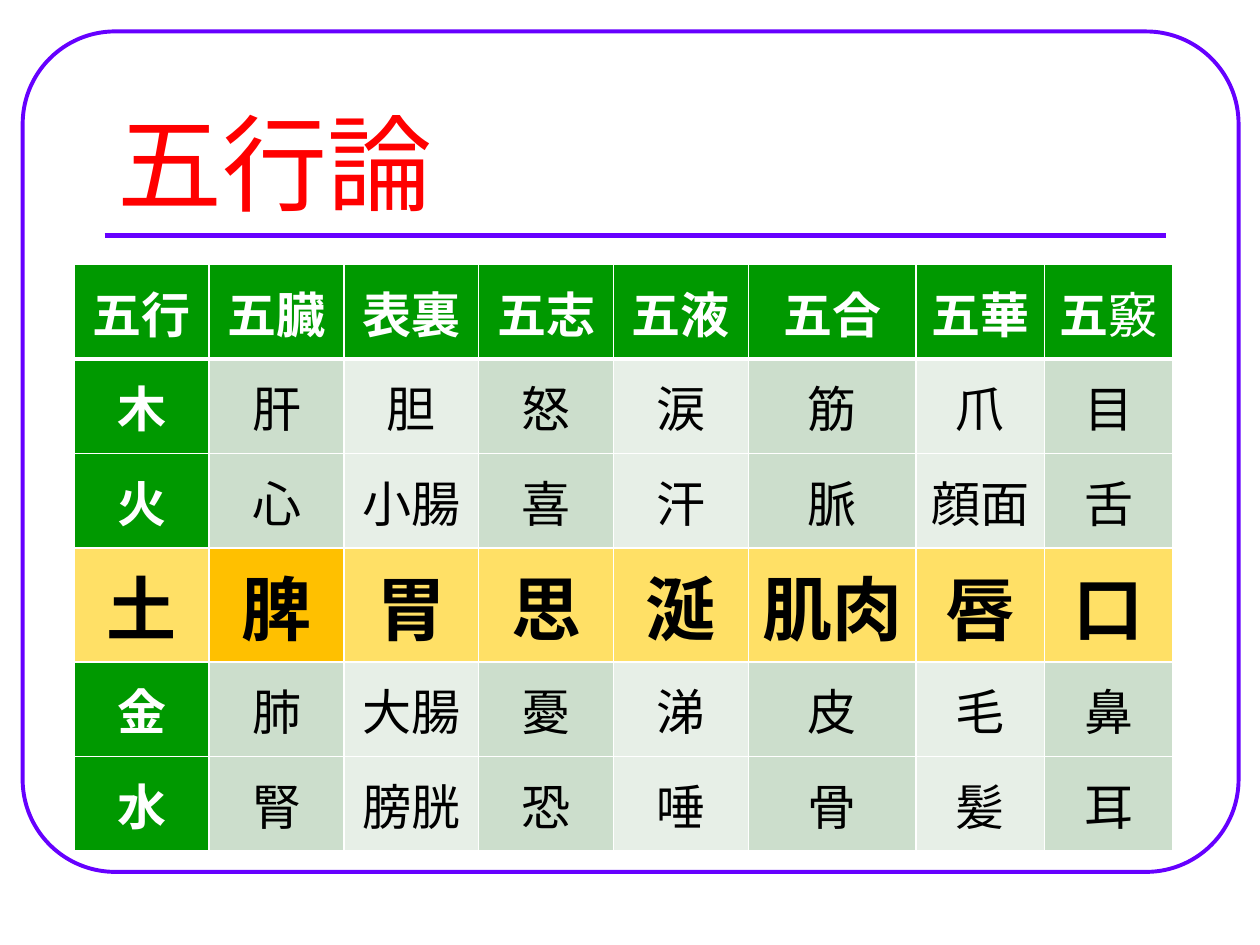
from lxml import etree
from pptx import Presentation
from pptx import util as u
from pptx.dml.color import RGBColor
from pptx.enum import lang, shapes, text
from pptx.oxml.ns import qn

PURPLE = RGBColor(0x66, 0x00, 0xFF)
RED = RGBColor(0xFF, 0x00, 0x00)
WHITE = RGBColor(0xFF, 0xFF, 0xFF)
BLACK = RGBColor(0x00, 0x00, 0x00)
GREEN = RGBColor(0x00, 0x99, 0x00)
SAGE = RGBColor(0xCC, 0xDE, 0xCC)
PALE = RGBColor(0xE7, 0xEF, 0xE7)
YELLOW = RGBColor(0xFF, 0xE0, 0x66)
AMBER = RGBColor(0xFF, 0xC0, 0x00)

ROWS = [
    ["五行", "五臓", "表裏", "五志", "五液", "五合", "五華", "五竅"],
    ["木", "肝", "胆", "怒", "涙", "筋", "爪", "目"],
    ["火", "心", "小腸", "喜", "汗", "脈", "顔面", "舌"],
    ["土", "脾", "胃", "思", "涎", "肌肉", "唇", "口"],
    ["金", "肺", "大腸", "憂", "涕", "皮", "毛", "鼻"],
    ["水", "腎", "膀胱", "恐", "唾", "骨", "髪", "耳"],
]
WIDTHS = [1.07] * 5 + [1.33, 1.02, 1.02]
EARTH_ROW = 3


def add_span(para, words, font, size, color, bold=False):
    span = para.add_run()
    span.text = words
    span.font.name = font
    span.font.size = u.Pt(size)
    span.font.color.rgb = color
    span.font.bold = bold
    span.font.language_id = lang.MSO_LANGUAGE_ID.JAPANESE


def set_borders(cell, top, bottom):
    properties = cell._tc.get_or_add_tcPr()
    edges = [("a:lnL", 1), ("a:lnR", 1), ("a:lnT", top), ("a:lnB", bottom)]
    for place, (tag, points) in enumerate(edges):
        edge = etree.Element(qn(tag), w=str(u.Pt(points)))
        fill = etree.SubElement(edge, qn("a:solidFill"))
        etree.SubElement(fill, qn("a:srgbClr"), val=str(WHITE))
        properties.insert(place, edge)


deck = Presentation()
deck.slide_width = u.Inches(10)
deck.slide_height = u.Inches(7.5)
page = deck.slides.add_slide(deck.slide_layouts[5])

frame = page.shapes.add_shape(
    shapes.MSO_SHAPE.ROUNDED_RECTANGLE,
    u.Inches(0.18), u.Inches(0.25), u.Inches(9.65), u.Inches(6.67))
frame.adjustments[0] = 0.11
frame.shadow.inherit = False
frame.fill.background()
frame.line.color.rgb = PURPLE
frame.line.width = u.Pt(2.25)

rule = page.shapes.add_connector(
    shapes.MSO_CONNECTOR.STRAIGHT,
    u.Inches(0.83), u.Inches(1.87), u.Inches(9.25), u.Inches(1.87))
rule.line.color.rgb = PURPLE
rule.line.width = u.Pt(3)
etree.SubElement(rule._element.spPr, qn("a:effectLst"))

title = page.shapes.title
title.left, title.top = u.Inches(0.83), u.Inches(0.58)
title.width, title.height = u.Inches(8.42), u.Inches(1.25)
title.text_frame.vertical_anchor = text.MSO_ANCHOR.BOTTOM
title.text_frame.auto_size = text.MSO_AUTO_SIZE.NONE
para = title.text_frame.paragraphs[0]
para.alignment = text.PP_ALIGN.LEFT
add_span(para, "五行論", "Montserrat", 60, RED)

table = page.shapes.add_table(
    len(ROWS), len(WIDTHS),
    u.Inches(0.59), u.Inches(2.1), u.Inches(sum(WIDTHS)), u.Inches(4.5)).table
for column, width in zip(table.columns, WIDTHS):
    column.width = u.Inches(width)

for r, words in enumerate(ROWS):
    table.rows[r].height = u.Inches(0.75)
    for c, word in enumerate(words):
        cell = table.cell(r, c)
        size, color, bold = 28, BLACK, False
        if r == EARTH_ROW:
            fill, size, bold = (AMBER if c == 1 else YELLOW), 40, True
        elif r == 0 or c == 0:
            fill, color, bold = GREEN, WHITE, True
        else:
            fill = SAGE if c % 2 else PALE
        cell.fill.solid()
        cell.fill.fore_color.rgb = fill
        set_borders(cell, 3 if r == 1 else 1, 3 if r == 0 else 1)
        cell.vertical_anchor = text.MSO_ANCHOR.MIDDLE
        para = cell.text_frame.paragraphs[0]
        para.alignment = text.PP_ALIGN.CENTER
        if word == "五竅":
            add_span(para, "五", "Arial", size, color, True)
            add_span(para, "竅", "Arial", size, color)
        else:
            add_span(para, word, "Arial", size, color, bold)

deck.save("out.pptx")
